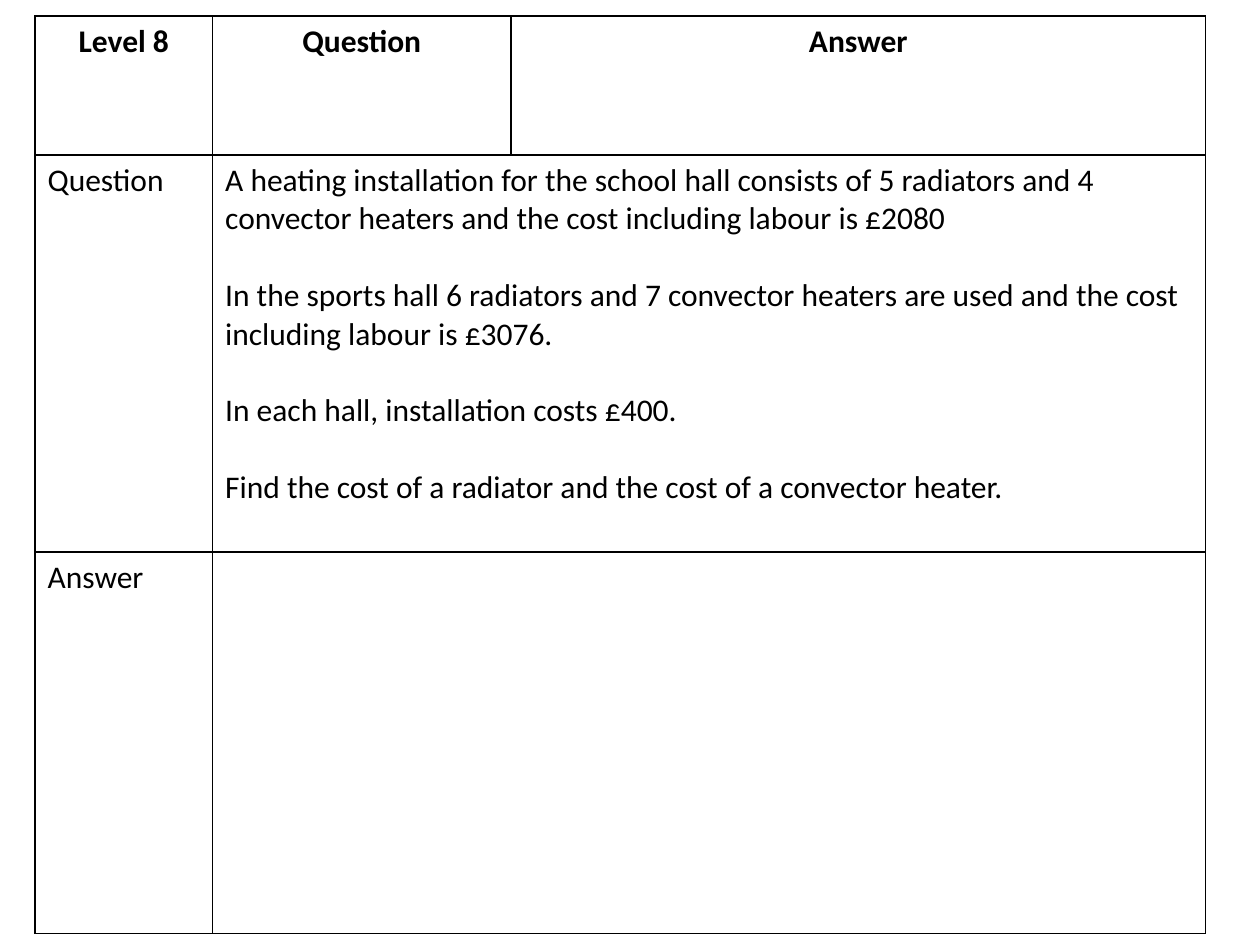
from lxml.etree import SubElement as Sub
from pptx import Presentation
from pptx.dml.color import RGBColor as RGB
from pptx.enum.text import PP_ALIGN as Align
from pptx.oxml.ns import qn
from pptx.util import Pt

INK = "000000"
COLS = [101.5, 170.5, 397]
ROWS = [79.5, 227, 218]
HEADS = ["Level 8", "Question", "Answer"]
TASK = [
    "A heating installation for the school hall consists of 5 radiators and 4 "
    "convector heaters and the cost including labour is £2080",
    "In the sports hall 6 radiators and 7 convector heaters are used and the cost "
    "including labour is £3076.",
    "In each hall, installation costs £400.",
    "Find the cost of a radiator and the cost of a convector heater.",
]


def color(code):
    return RGB.from_string(code)


def border(cell, width=1):
    props = cell._tc.get_or_add_tcPr()
    for side in ("lnL", "lnR", "lnT", "lnB"):
        line = Sub(props, qn(f"a:{side}"), w=str(Pt(width)))
        fill = Sub(line, qn("a:solidFill"))
        Sub(fill, qn("a:srgbClr"), val=INK)


def write(cell, lines, bold=False, align=Align.LEFT, gap=22):
    frame = cell.text_frame
    for i, line in enumerate(lines):
        para = frame.add_paragraph() if i else frame.paragraphs[0]
        para.alignment = align
        para.space_before = Pt(gap if i else 0)
        run = para.add_run()
        run.text = line
        font = run.font
        font.name, font.size, font.bold = "Calibri", Pt(18), bold
        font.color.rgb = color(INK)


def draw_card(slide, left, top, cols, rows):
    box = [Pt(n) for n in (left, top, sum(cols), sum(rows))]
    table = slide.shapes.add_table(len(rows), len(cols), *box).table
    table.first_row = table.horz_banding = False
    for col, width in zip(table.columns, cols):
        col.width = Pt(width)
    for row, height in zip(table.rows, rows):
        row.height = Pt(height)

    # Plain ruled cells
    for cell in table.iter_cells():
        border(cell)
        cell.fill.background()

    # Heading row
    for i, head in enumerate(HEADS):
        write(table.cell(0, i), [head], bold=True, align=Align.CENTER)

    # Question and answer rows, each with one wide cell
    for i, (label, lines) in enumerate([("Question", TASK), ("Answer", [])], 1):
        write(table.cell(i, 0), [label])
        wide = table.cell(i, 1)
        wide.merge(table.cell(i, 2))
        write(wide, lines)


def main():
    deck = Presentation()
    deck.slide_width, deck.slide_height = Pt(720), Pt(540)
    slide = deck.slides.add_slide(deck.slide_layouts[6])
    draw_card(slide, 20, 9, COLS, ROWS)
    deck.save("out.pptx")


if __name__ == "__main__":
    main()
